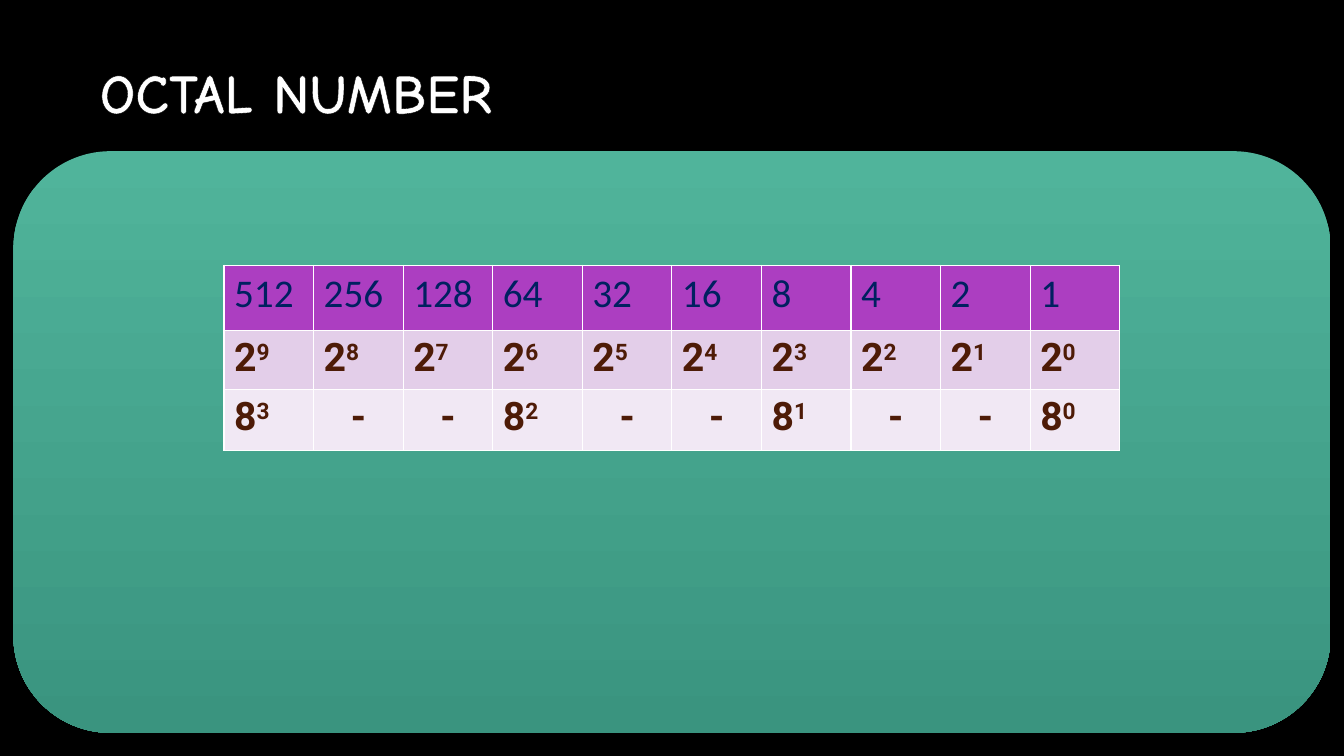
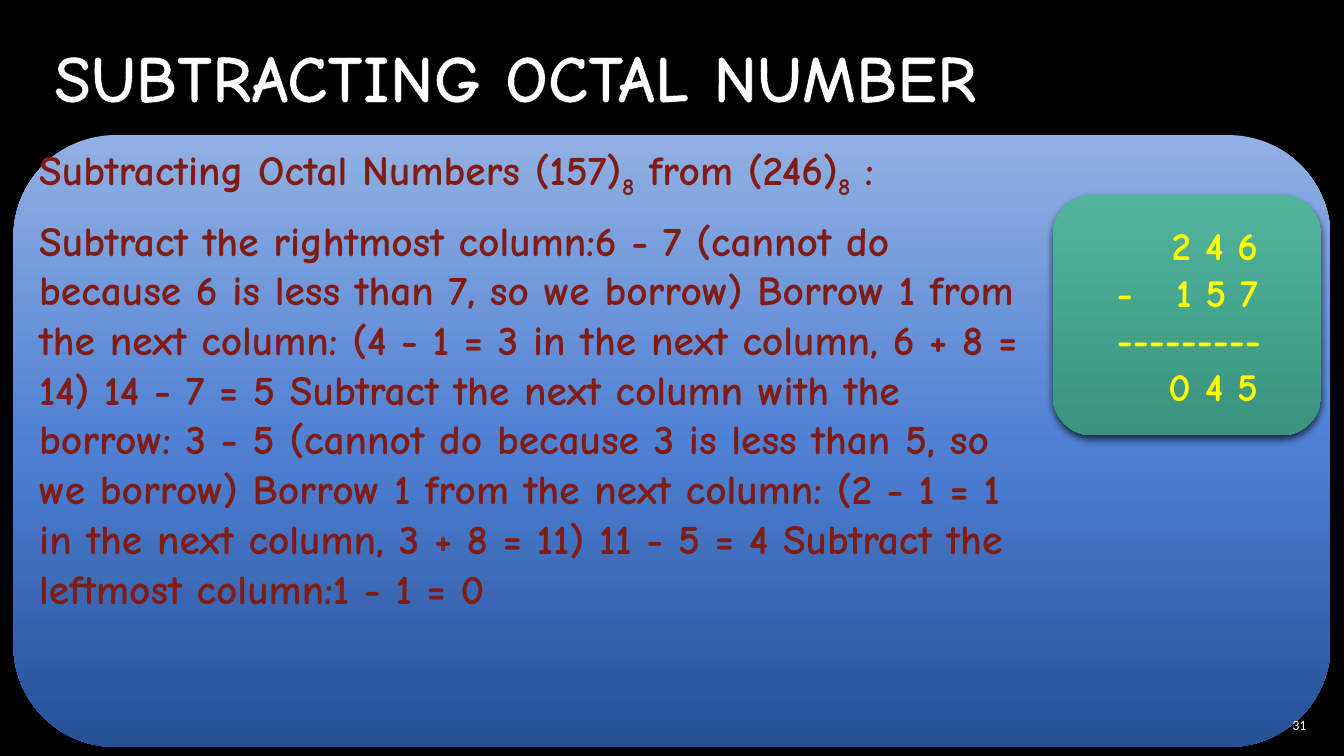
from dataclasses import dataclass

from pptx import Presentation
from pptx.dml.color import RGBColor
from pptx.enum.shapes import MSO_SHAPE
from pptx.enum.text import MSO_ANCHOR, PP_ALIGN
from pptx.oxml import parse_xml
from pptx.oxml.ns import nsdecls, qn
from pptx.util import Inches, Pt

ROUNDED = MSO_SHAPE.ROUNDED_RECTANGLE
TOP, MIDDLE = MSO_ANCHOR.TOP, MSO_ANCHOR.MIDDLE
LEFT, CENTER, RIGHT = PP_ALIGN.LEFT, PP_ALIGN.CENTER, PP_ALIGN.RIGHT
SUPERSCRIPT, SUBSCRIPT = 30, -25


@dataclass(frozen=True)
class TextStyle:
    font: str
    size: float
    color: str
    bold: bool = False
    outline: tuple = ()


@dataclass(frozen=True)
class Theme:
    background: str = "000000"
    green: tuple = ((0, "50B49B"), (100, "3A947F"))
    blue: tuple = ((0, "91B0E3"), (52, "4D7FD2"), (100, "265096"))
    table_fills: tuple = ("AC3EC1", "E3CEE9", "F1E8F4")
    border: str = "FFFFFF"
    title: TextStyle = TextStyle("Comic Neue", 40, "FFFFFF", True, ("000000", 1.06))
    big_title: TextStyle = TextStyle("Comic Neue", 48, "FFFFFF", True, ("000000", 1.06))
    body: TextStyle = TextStyle("Comic Neue", 29.6, "801C14", True, ("000000", 1.06))
    sum: TextStyle = TextStyle("Comic Neue", 28, "FFFF00", True, ("477BD1", 0.52))
    place: TextStyle = TextStyle("Calibri", 28, "002060")
    power: TextStyle = TextStyle("Roboto", 28, "4E1B07", True)
    number: TextStyle = TextStyle("Calibri", 10, "FFFFFF")


def xml(markup):
    head, tail = markup.split(" ", 1) if " " in markup.split(">")[0] else markup.split(">", 1)
    joint = " " if " " in markup.split(">")[0] else ">"
    return parse_xml(f"{head} {nsdecls('a')}{joint}{tail}")


class Deck:
    """Holds the theme and current slide; boxes are percentages of the slide."""

    def __init__(self, theme):
        self.theme = theme
        self.prs = Presentation()
        self.prs.slide_width, self.prs.slide_height = Inches(40 / 3), Inches(7.5)
        self.slide = None

    def x(self, share):
        return round(self.prs.slide_width * share / 100)

    def y(self, share):
        return round(self.prs.slide_height * share / 100)

    def place(self, box):
        left, top, width, height = box
        return self.x(left), self.y(top), self.x(width), self.y(height)

    def new_slide(self):
        self.slide = self.prs.slides.add_slide(self.prs.slide_layouts[6])
        fill = self.slide.background.fill
        fill.solid()
        fill.fore_color.rgb = RGBColor.from_string(self.theme.background)

    def add_runs(self, paragraph, runs, style, align=LEFT):
        paragraph.alignment = align
        for text, baseline in runs:
            run = paragraph.add_run()
            run.text = text
            font = run.font
            font.name, font.size, font.bold = style.font, Pt(style.size), style.bold
            font.color.rgb = RGBColor.from_string(style.color)
            properties = run._r.get_or_add_rPr()
            if baseline:
                properties.set("baseline", str(baseline * 1000))
            if style.outline:
                color, width = style.outline
                properties.insert(0, xml(
                    f'<a:ln w="{Pt(width)}"><a:solidFill><a:srgbClr val="{color}"/>'
                    '</a:solidFill></a:ln>'))

    def fill_frame(self, frame, paragraphs, style, align=LEFT, anchor=TOP, after=0, tab=0):
        frame.word_wrap = True
        frame.vertical_anchor = anchor
        for index, runs in enumerate(paragraphs):
            paragraph = frame.add_paragraph() if index else frame.paragraphs[0]
            if tab:
                paragraph._p.get_or_add_pPr().append(xml(
                    f'<a:tabLst><a:tab pos="{self.x(tab)}" algn="r"/></a:tabLst>'))
            paragraph.space_after = Pt(after)
            self.add_runs(paragraph, runs, style, align)

    def text(self, box, paragraphs, style, **layout):
        frame = self.slide.shapes.add_textbox(*self.place(box)).text_frame
        self.fill_frame(frame, paragraphs, style, **layout)

    def title(self, box, words, style):
        self.text(box, [[(words, 0)]], style, anchor=MIDDLE)

    def panel(self, box, stops, shadow=False):
        panel = self.slide.shapes.add_shape(ROUNDED, *self.place(box))
        panel.line.fill.background()
        panel.shadow.inherit = False
        colors = "".join(
            f'<a:gs pos="{position * 1000}"><a:srgbClr val="{color}"/></a:gs>'
            for position, color in stops)
        properties = panel._element.spPr
        properties.find(qn("a:prstGeom")).addnext(xml(
            f'<a:gradFill rotWithShape="1"><a:gsLst>{colors}</a:gsLst>'
            '<a:lin ang="5400000" scaled="0"/></a:gradFill>'))
        if shadow:
            properties.find(qn("a:effectLst")).append(xml(
                f'<a:outerShdw blurRad="{Pt(5)}" dist="{Pt(3)}" dir="5400000" rotWithShape="0">'
                '<a:srgbClr val="000000"><a:alpha val="65000"/></a:srgbClr></a:outerShdw>'))
        return panel

    def sum_card(self, box, lines, inset, tab):
        frame = self.panel(box, self.theme.green, shadow=True).text_frame
        frame.margin_left = self.x(inset)
        self.fill_frame(frame, [[(line, 0)] for line in lines], self.theme.sum,
                        anchor=MIDDLE, tab=tab)

    def table(self, left, top, width, heights, rows, styles):
        box = (left, top, width, sum(heights))
        table = self.slide.shapes.add_table(
            len(rows), len(rows[0]), *self.place(box)).table
        table.first_row = table.horz_banding = False
        for column in table.columns:
            column.width = self.x(width / len(rows[0]))
        for r, (cells, height) in enumerate(zip(rows, heights)):
            table.rows[r].height = self.y(height)
            for c, runs in enumerate(cells):
                cell = table.cell(r, c)
                align = CENTER if runs[0][0] == "-" else LEFT
                self.add_runs(cell.text_frame.paragraphs[0], runs, styles[r], align)
                self.paint(cell, self.theme.table_fills[r])

    def paint(self, cell, color):
        properties = cell._tc.get_or_add_tcPr()
        for side in ("lnL", "lnR", "lnT", "lnB"):
            properties.append(xml(
                f'<a:{side} w="{Pt(1)}"><a:solidFill><a:srgbClr val="{self.theme.border}"/>'
                f'</a:solidFill></a:{side}>'))
        cell.fill.solid()
        cell.fill.fore_color.rgb = RGBColor.from_string(color)


def place_values(deck):
    theme = deck.theme
    deck.new_slide()
    deck.panel((1, 20, 98, 76.93), theme.green, shadow=True)
    deck.title((6.68, 1.47, 83.1, 21.2), "OCTAL NUMBER", theme.title)
    exponents = range(9, -1, -1)
    values = [[(str(2 ** e), 0)] for e in exponents]
    binary = [[("2", 0), (str(e), SUPERSCRIPT)] for e in exponents]
    octal = [[("-", 0)] if e % 3 else [("8", 0), (str(e // 3), SUPERSCRIPT)]
             for e in exponents]
    deck.table(16.67, 35.07, 66.67, (8.67, 7.8, 8.1), (values, binary, octal),
               (theme.place, theme.power, theme.power))


def subtraction(deck):
    theme = deck.theme
    deck.new_slide()
    deck.panel((1, 17.87, 98, 80.93), theme.blue)
    deck.title((3.3, 2.13, 88.65, 15.73), "SUBTRACTING OCTAL NUMBER", theme.big_title)
    heading = [("Subtracting Octal Numbers (157)", 0), ("8", SUBSCRIPT),
               (" from (246)", 0), ("8", SUBSCRIPT), (" :", 0)]
    steps = (
        "Subtract the rightmost column:6 - 7 (cannot do because 6 is less than 7, "
        "so we borrow) Borrow 1 from the next column: (4 - 1 = 3 in the next column, "
        "6 + 8 = 14) 14 - 7 = 5 Subtract the next column with the borrow: 3 - 5 "
        "(cannot do because 3 is less than 5, so we borrow) Borrow 1 from the next "
        "column: (2 - 1 = 1 in the next column, 3 + 8 = 11) 11 - 5 = 4 Subtract the "
        "leftmost column:1 - 1 = 0")
    deck.text((2.18, 18.4, 76.13, 79.6), [heading, [(steps, 0)]], theme.body, after=10)
    deck.text((93.45, 93.2, 4.5, 5.47), [[("31", 0)]], theme.number,
              align=RIGHT, anchor=MIDDLE)
    deck.sum_card((78.32, 25.73, 20, 31.87),
                  ("\t2 4 6", "-\t1 5 7", "-" * 9, "\t0 4 5"), inset=3.9, tab=10.5)


def main():
    deck = Deck(Theme())
    place_values(deck)
    subtraction(deck)
    deck.prs.save("out.pptx")


if __name__ == "__main__":
    main()
